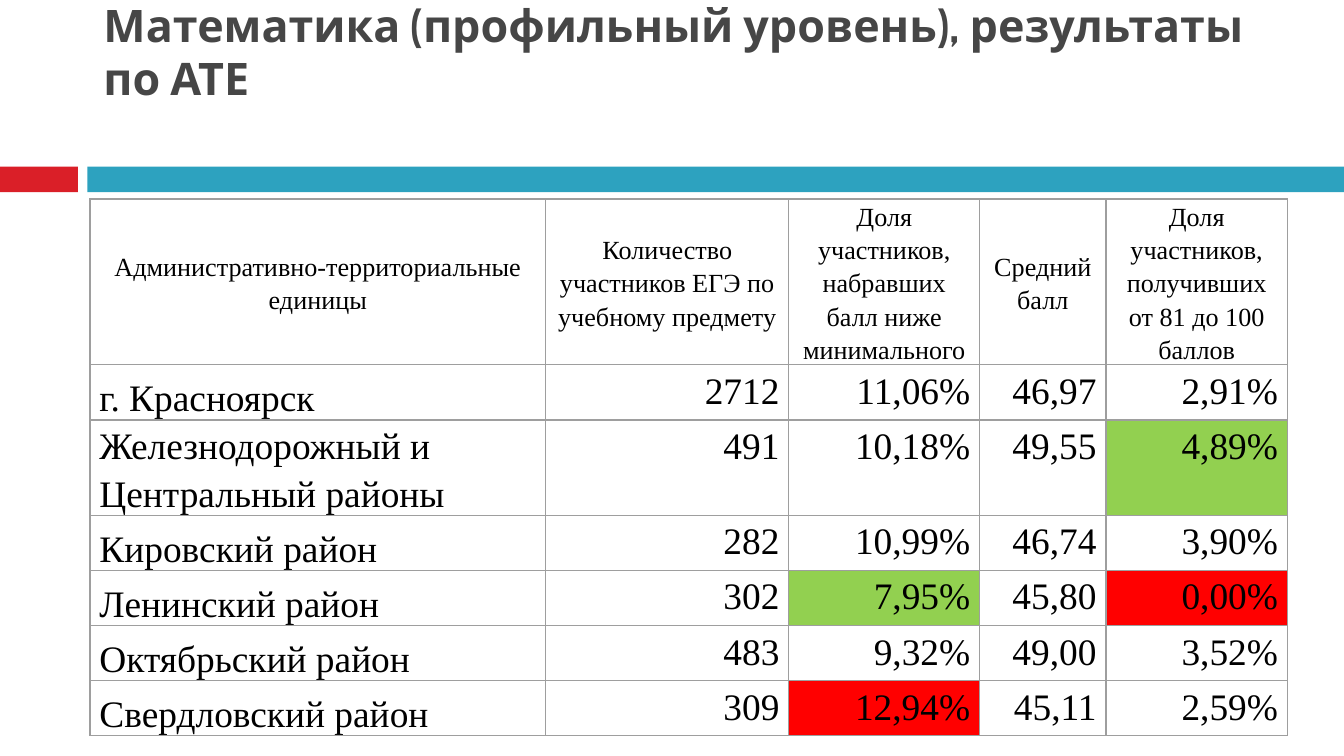
import pptx
import pptx.dml.color
import pptx.enum.shapes
import pptx.enum.text
import pptx.oxml
import pptx.oxml.ns
import pptx.util

Inches = pptx.util.Inches
Pt = pptx.util.Pt
ALIGN = pptx.enum.text.PP_ALIGN
ANCHOR = pptx.enum.text.MSO_ANCHOR

RED, GREEN = "FF0000", "92D050"
COLUMN_WIDTHS = [3.39, 1.81, 1.42, 0.94, 1.35]
ROW_HEIGHTS = [1.23, 0.41, 0.71, 0.41, 0.41, 0.41, 0.41]
ROWS = [
    ["Административно-территориальные единицы",
     "Количество участников ЕГЭ по учебному предмету",
     "Доля участников, набравших балл ниже минимального",
     "Средний балл",
     "Доля участников, получивших от 81 до 100 баллов"],
    ["г. Красноярск", "2712", "11,06%", "46,97", "2,91%"],
    ["Железнодорожный и Центральный районы", "491", "10,18%", "49,55", "4,89%"],
    ["Кировский район", "282", "10,99%", "46,74", "3,90%"],
    ["Ленинский район", "302", "7,95%", "45,80", "0,00%"],
    ["Октябрьский район", "483", "9,32%", "49,00", "3,52%"],
    ["Свердловский район", "309", "12,94%", "45,11", "2,59%"],
]
HIGHLIGHTS = {(2, 4): GREEN, (4, 2): GREEN, (4, 4): RED, (6, 2): RED}


def color(hex_value):
    return pptx.dml.color.RGBColor.from_string(hex_value)


def set_attributes(target, values):
    for name, value in values.items():
        setattr(target, name, value)


def format_paragraph(paragraph, font, size, hex_value, bold, alignment, spacing):
    set_attributes(paragraph, {"alignment": alignment, "line_spacing": spacing})
    run_font = paragraph.runs[0].font
    set_attributes(run_font, {"name": font, "size": Pt(size), "bold": bold})
    run_font.color.rgb = color(hex_value)


def add_title(slide, left, top, width, height):
    title = slide.shapes.title
    set_attributes(title, {"left": Inches(left), "top": Inches(top),
                           "width": Inches(width), "height": Inches(height)})
    frame = title.text_frame
    frame.text = "Математика (профильный уровень), результаты по АТЕ"
    set_attributes(frame, {
        "word_wrap": True, "auto_size": pptx.enum.text.MSO_AUTO_SIZE.NONE,
        "vertical_anchor": ANCHOR.BOTTOM, "margin_left": Inches(0.1),
        "margin_right": Inches(0.1), "margin_top": 0, "margin_bottom": Inches(0.45)})
    format_paragraph(frame.paragraphs[0], "Cabin", 24, "464646", True, ALIGN.LEFT, 1.0)


def add_divider(slide, left, top, width, height):
    accent_width, gap = 0.58, 0.07
    main_left = accent_width + gap
    for offset, bar_width, fill in [(0, accent_width, "DA1F28"),
                                    (main_left, width - main_left, "2DA2BF")]:
        bar = slide.shapes.add_shape(
            pptx.enum.shapes.MSO_SHAPE.RECTANGLE, Inches(left + offset),
            Inches(top), Inches(bar_width), Inches(height))
        bar.shadow.inherit = False
        bar.fill.solid()
        bar.fill.fore_color.rgb = color(fill)
        bar.line.fill.background()


def add_borders(cell, hex_value, points):
    # Border lines must come before the fill in the cell properties
    properties = cell._tc.get_or_add_tcPr()
    for index, side in enumerate(["lnL", "lnR", "lnT", "lnB"]):
        properties.insert(index, pptx.oxml.parse_xml(
            f'<a:{side} {pptx.oxml.ns.nsdecls("a")} w="{Pt(points)}">'
            f'<a:solidFill><a:srgbClr val="{hex_value}"/></a:solidFill></a:{side}>'))


def add_results_table(slide, left, top, width, height):
    table = slide.shapes.add_table(
        len(ROWS), len(COLUMN_WIDTHS), Inches(left), Inches(top),
        Inches(width), Inches(height)).table
    set_attributes(table, {"first_row": False, "horz_banding": False})
    for column, column_width in zip(table.columns, COLUMN_WIDTHS):
        column.width = Inches(column_width)
    for row, row_height in zip(table.rows, ROW_HEIGHTS):
        row.height = Inches(row_height)

    for row_index, texts in enumerate(ROWS):
        for column_index, text in enumerate(texts):
            # Header is centred, names sit at the bottom, numbers at the right
            if row_index == 0:
                size, alignment, anchor = 14, ALIGN.CENTER, ANCHOR.MIDDLE
            elif column_index == 0:
                size, alignment, anchor = 20, ALIGN.LEFT, ANCHOR.BOTTOM
            else:
                size, alignment, anchor = 20, ALIGN.RIGHT, ANCHOR.TOP
            cell = table.cell(row_index, column_index)
            cell.text = text
            set_attributes(cell, {
                "vertical_anchor": anchor, "margin_left": Inches(0.07),
                "margin_right": Inches(0.07), "margin_top": 0, "margin_bottom": 0})
            format_paragraph(cell.text_frame.paragraphs[0], "Times New Roman",
                             size, "000000", False, alignment, 1.15)
            cell.fill.solid()
            cell.fill.fore_color.rgb = color(
                HIGHLIGHTS.get((row_index, column_index), "FFFFFF"))
            add_borders(cell, "9E9E9E", 0.75)


def main():
    presentation = pptx.Presentation()
    # Widescreen page, 16:9
    slide_width = Inches(10)
    set_attributes(presentation, {"slide_width": slide_width,
                                  "slide_height": slide_width * 9 // 16})
    title_only = presentation.slide_layouts[5]
    slide = presentation.slides.add_slide(title_only)
    add_divider(slide, 0, 1.24, 10, 0.19)
    add_title(slide, 0.67, 0.13, 8.92, 1.1)
    add_results_table(slide, 0.67, 1.48, sum(COLUMN_WIDTHS), sum(ROW_HEIGHTS))
    presentation.save("out.pptx")


if __name__ == "__main__":
    main()
